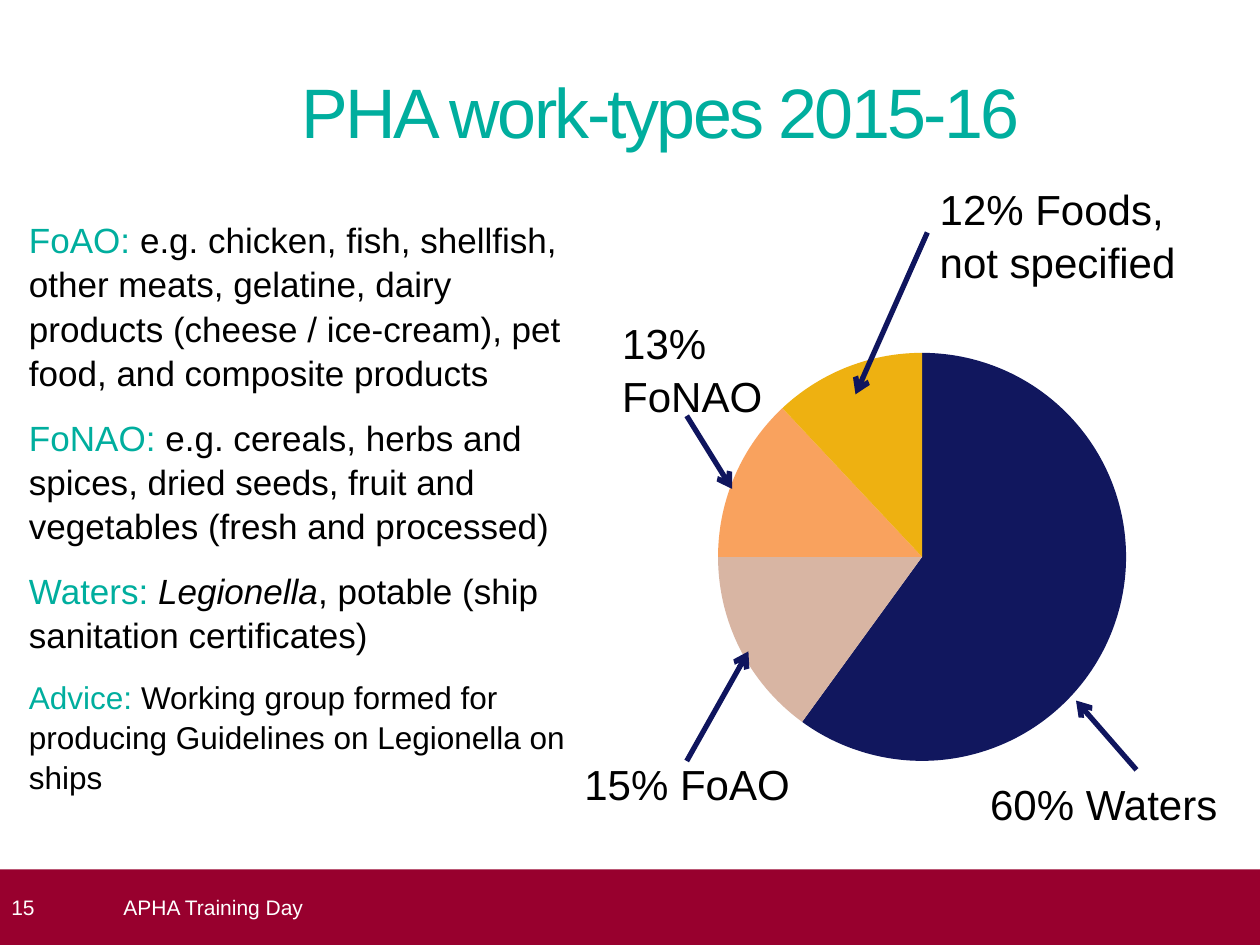
from typing import NamedTuple, Optional

from lxml.etree import SubElement
from pptx import Presentation
from pptx.chart.data import CategoryChartData
from pptx.dml.color import RGBColor
from pptx.enum.chart import XL_CHART_TYPE
from pptx.enum.shapes import MSO_CONNECTOR, MSO_SHAPE
from pptx.enum.text import MSO_ANCHOR, MSO_AUTO_SIZE, PP_ALIGN
from pptx.oxml import parse_xml
from pptx.oxml.ns import nsdecls, qn
from pptx.util import Inches, Pt

TEAL, NAVY, MAROON = "00AE9E", "0F155E", "98002E"
BLACK, WHITE = "000000", "FFFFFF"
FONT = "Arial"
LINE_SPACING = 1.05


class Run(NamedTuple):
    text: str
    italic: bool = False


class WorkType(NamedTuple):
    heading: str
    runs: list[Run]
    size: int = 20


class Callout(NamedTuple):
    lines: list[str]
    box: tuple[float, float, float, float]
    start: tuple[float, float]
    end: tuple[float, float]
    site: Optional[int] = None


class Slice(NamedTuple):
    value: int
    color: str


WORK_TYPES = [
    WorkType("FoAO: ", [Run("e.g. chicken, fish, shellfish, other meats, gelatine, dairy "
                            "products (cheese / ice-cream), pet food, and composite products")]),
    WorkType("FoNAO: ", [Run("e.g. cereals, herbs and spices, dried seeds, fruit and "
                             "vegetables (fresh and processed)")]),
    WorkType("Waters: ", [Run("Legionella", True),
                          Run(", potable (ship sanitation certificates)")]),
    WorkType("Advice: ", [Run("Working group formed for producing Guidelines on "
                              "Legionella on ships")], 18),
]
CALLOUTS = [
    Callout(["12% Foods,", "not specified"], (7.36, 1.39, 2.36, 0.91), (7.36, 1.84), (6.79, 3.13), 1),
    Callout(["15% FoAO"], (4.54, 5.95, 1.94, 0.51), (5.45, 6.04), (5.94, 5.17)),
    Callout(["13% FoNAO"], (4.84, 2.45, 1.94, 0.91), (5.45, 3.3), (5.81, 3.88)),
    Callout(["60% Waters"], (7.76, 6.11, 2.18, 0.51), (9.02, 6.11), (8.54, 5.56)),
]
SLICES = [Slice(60, "11175E"), Slice(15, "D8B5A3"), Slice(13, "F9A25E"), Slice(12, "EEB111")]


def rgb(color: str) -> RGBColor:
    return RGBColor.from_string(color)


def style(font, size: int, color: str, italic: bool = False) -> None:
    font.name = FONT
    font.size = Pt(size)
    font.italic = italic
    font.color.rgb = rgb(color)


def set_frame(tf, left: float = 0, anchor=MSO_ANCHOR.TOP) -> None:
    tf.word_wrap = True
    tf.auto_size = MSO_AUTO_SIZE.NONE
    tf.vertical_anchor = anchor
    tf.margin_left = Inches(left)
    tf.margin_top = tf.margin_right = tf.margin_bottom = 0


def add_title(s, text: str) -> None:
    sp = s.shapes.title
    sp.left, sp.top, sp.width, sp.height = map(Inches, (2.39, 0.52, 6.45, 0.71))
    tf = sp.text_frame
    set_frame(tf, anchor=MSO_ANCHOR.MIDDLE)
    tf.text = text
    p = tf.paragraphs[0]
    p.alignment = PP_ALIGN.LEFT
    r = p.runs[0]
    style(r.font, 40, TEAL)
    r.font._element.set("spc", "-150")


def add_work_types(s, items: list[WorkType]) -> None:
    tf = s.shapes.add_textbox(*map(Inches, (0.23, 1.72, 4.29, 4.45))).text_frame
    set_frame(tf)
    for i, item in enumerate(items):
        p = tf.add_paragraph() if i else tf.paragraphs[0]
        p.line_spacing = LINE_SPACING
        p.space_before = Pt(12 if i else 0)
        for j, run in enumerate([Run(item.heading), *item.runs]):
            r = p.add_run()
            r.text = run.text
            style(r.font, item.size, BLACK if j else TEAL, run.italic)


def add_pie(s, slices: list[Slice]) -> None:
    data = CategoryChartData()
    data.categories = [str(i) for i in range(1, len(slices) + 1)]
    data.add_series("Series 1", [item.value for item in slices])
    chart = s.shapes.add_chart(XL_CHART_TYPE.PIE, *map(Inches, (4.69, 2.65, 5.31, 3.54)), data).chart
    chart.has_legend = False
    chart.has_title = False
    style(chart.font, 10, BLACK)
    plot = chart.plots[0]
    plot.vary_by_categories = True
    for i, item in enumerate(slices):
        fill = plot.series[0].points[i].format.fill
        fill.solid()
        fill.fore_color.rgb = rgb(item.color)
    area = chart._chartSpace.find(".//" + qn("c:plotArea"))
    for old in area.findall(qn("c:layout")):
        area.remove(old)
    layout = parse_xml(
        f'<c:layout {nsdecls("c")}><c:manualLayout><c:layoutTarget val="inner"/>'
        '<c:xMode val="edge"/><c:yMode val="edge"/><c:x val="0.19"/><c:y val="0.04"/>'
        '<c:w val="0.61"/><c:h val="0.92"/></c:manualLayout></c:layout>')
    area.insert(0, layout)


def add_callout(s, item: Callout) -> None:
    sp = s.shapes.add_textbox(*map(Inches, item.box))
    tf = sp.text_frame
    tf.word_wrap = True
    tf.auto_size = MSO_AUTO_SIZE.SHAPE_TO_FIT_TEXT
    tf.text = "\n".join(item.lines)
    for p in tf.paragraphs:
        p.line_spacing = LINE_SPACING
        style(p.runs[0].font, 24, BLACK)
    line = s.shapes.add_connector(MSO_CONNECTOR.STRAIGHT, *map(Inches, item.start + item.end))
    if item.site is not None:
        line.begin_connect(sp, item.site)
    line.line.color.rgb = rgb(NAVY)
    line.line.width = Pt(3)
    SubElement(line.line._get_or_add_ln(), qn("a:tailEnd"), type="arrow")
    SubElement(line._element.spPr, qn("a:effectLst"))


def add_footer(s, number: str, text: str) -> None:
    bar = s.shapes.add_shape(MSO_SHAPE.RECTANGLE, *map(Inches, (0, 6.9, 10, 0.6)))
    bar.shadow.inherit = False
    bar.fill.solid()
    bar.fill.fore_color.rgb = rgb(MAROON)
    bar.line.fill.background()
    label = s.shapes.add_textbox(*map(Inches, (0.98, 6.9, 8.82, 0.6)))
    for sp, content, left in ((bar, number, 0.09), (label, text, 0)):
        tf = sp.text_frame
        set_frame(tf, left, MSO_ANCHOR.MIDDLE)
        tf.text = content
        p = tf.paragraphs[0]
        p.alignment = PP_ALIGN.LEFT
        style(p.runs[0].font, 12, WHITE)


def main() -> None:
    prs = Presentation()
    prs.slide_width, prs.slide_height = Inches(10), Inches(7.5)
    s = prs.slides.add_slide(prs.slide_layouts[5])
    add_title(s, "PHA work-types 2015-16")
    add_work_types(s, WORK_TYPES)
    add_pie(s, SLICES)
    for item in CALLOUTS:
        add_callout(s, item)
    add_footer(s, "15", "APHA Training Day")
    prs.save("out.pptx")


if __name__ == "__main__":
    main()
